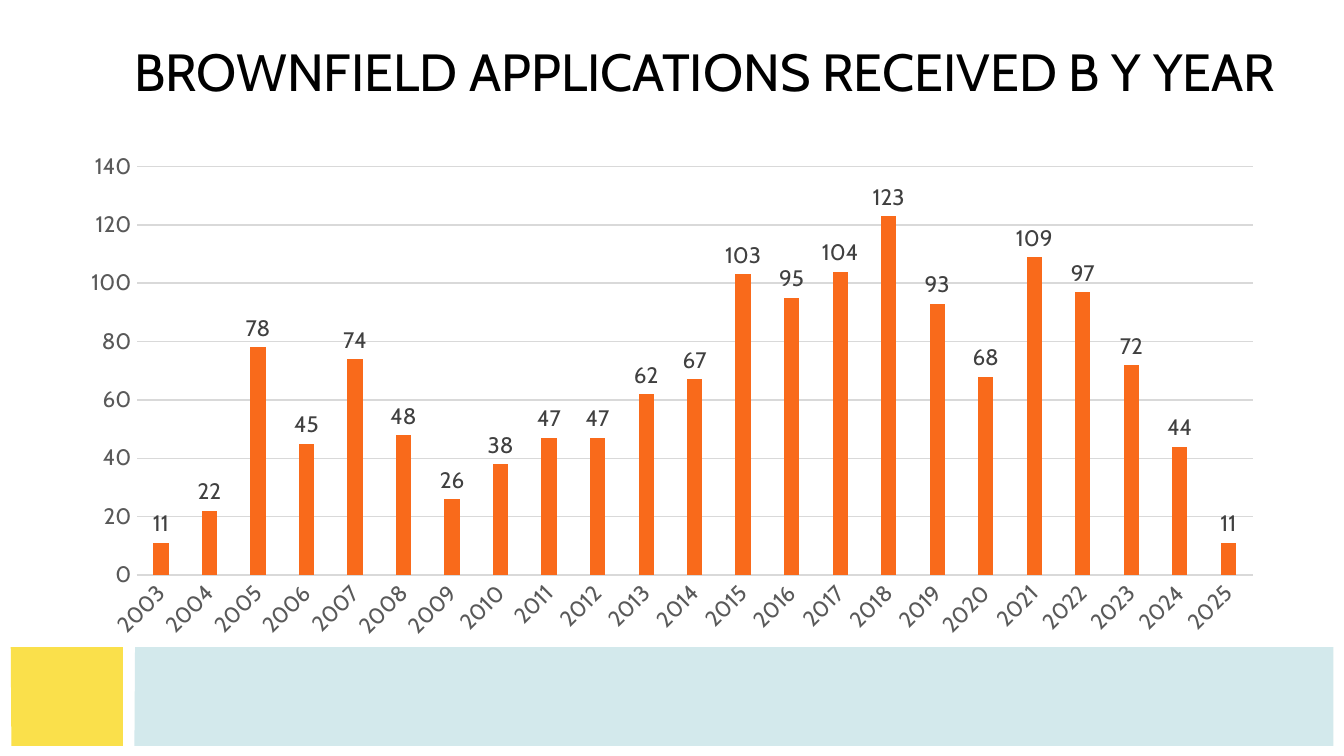
from dataclasses import dataclass

import pptx
import pptx.chart.data
import pptx.dml.color
import pptx.enum.chart
import pptx.enum.text
import pptx.oxml.ns
import pptx.util
from lxml import etree

EMU_PER_PX = 4572


@dataclass(frozen=True)
class Theme:
    font: str = "Cabin"
    title_color: str = "000000"
    axis_text: str = "595959"
    value_text: str = "404040"
    gridline: str = "D9D9D9"
    bar: str = "F96A1B"
    yellow: str = "FAE04B"
    pale_blue: str = "C8E4E8"
    title_size: int = 28
    chart_size: int = 12
    line_width: float = 0.75


@dataclass(frozen=True)
class Panel:
    corners: tuple[tuple[int, int], ...]
    color: str
    opacity: int = 100


THEME = Theme()
FOOTER_PANELS = (
    Panel(((17, 1110), (16, 963), (183, 963), (183, 1110)), THEME.yellow),
    Panel(((200, 1110), (201, 963), (1984, 963), (1984, 1110)), THEME.pale_blue, 80),
)
FIRST_YEAR = 2003
APPLICATIONS = (11, 22, 78, 45, 74, 48, 26, 38, 47, 47, 62, 67,
                103, 95, 104, 123, 93, 68, 109, 97, 72, 44, 11)


def px(length: int) -> int:
    return pptx.util.Emu(length * EMU_PER_PX)


def rgb(color: str) -> pptx.dml.color.RGBColor:
    return pptx.dml.color.RGBColor.from_string(color)


def style_font(font, size: int, color: str) -> None:
    font.name = THEME.font
    font.size = pptx.util.Pt(size)
    font.color.rgb = rgb(color)


def style_line(line) -> None:
    line.color.rgb = rgb(THEME.gridline)
    line.width = pptx.util.Pt(THEME.line_width)


def draw_panel(slide, panel: Panel) -> None:
    start, *others = panel.corners
    outline = slide.shapes.build_freeform(*start, scale=EMU_PER_PX)
    outline.add_line_segments(others, close=True)
    band = outline.convert_to_shape()
    band.shadow.inherit = False
    band.fill.solid()
    band.fill.fore_color.rgb = rgb(panel.color)
    band.line.fill.background()
    if panel.opacity < 100:
        color = band.element.xpath("./p:spPr/a:solidFill/a:srgbClr")[0]
        alpha = etree.SubElement(color, pptx.oxml.ns.qn("a:alpha"))
        alpha.set("val", str(panel.opacity * 1000))


def draw_title(slide, text: str) -> None:
    title = slide.shapes.add_textbox(px(180), px(60), px(1754), px(90)).text_frame
    title.word_wrap = True
    title.vertical_anchor = pptx.enum.text.MSO_ANCHOR.MIDDLE
    heading = title.paragraphs[0]
    heading.text = text
    style_font(heading.font, THEME.title_size, THEME.title_color)


def draw_applications_chart(slide) -> None:
    yearly = pptx.chart.data.CategoryChartData()
    yearly.categories = [str(FIRST_YEAR + i) for i in range(len(APPLICATIONS))]
    yearly.add_series("Series 1", APPLICATIONS)
    chart = slide.shapes.add_chart(
        pptx.enum.chart.XL_CHART_TYPE.COLUMN_CLUSTERED,
        px(100), px(213), px(1800), px(754), yearly).chart
    chart.has_legend = False
    chart.has_title = False
    style_font(chart.font, THEME.chart_size, THEME.axis_text)

    for axis in (chart.category_axis, chart.value_axis):
        axis.major_tick_mark = pptx.enum.chart.XL_TICK_MARK.NONE
        axis.minor_tick_mark = pptx.enum.chart.XL_TICK_MARK.NONE
        style_font(axis.tick_labels.font, THEME.chart_size, THEME.axis_text)
    style_line(chart.category_axis.format.line)
    year_labels = chart.element.xpath(".//c:catAx/c:txPr/a:bodyPr")[0]
    year_labels.set("rot", "-2700000")

    counts = chart.value_axis
    counts.minimum_scale, counts.maximum_scale, counts.major_unit = 0, 140, 20
    counts.format.line.fill.background()
    style_line(counts.major_gridlines.format.line)

    columns = chart.plots[0]
    columns.vary_by_categories = False
    columns.gap_width = 219
    columns.overlap = -27
    bars = columns.series[0]
    bars.format.fill.solid()
    bars.format.fill.fore_color.rgb = rgb(THEME.bar)
    bar_values = bars.data_labels
    bar_values.show_value = True
    bar_values.position = pptx.enum.chart.XL_LABEL_POSITION.OUTSIDE_END
    style_font(bar_values.font, THEME.chart_size, THEME.value_text)


def main() -> None:
    deck = pptx.Presentation()
    deck.slide_width, deck.slide_height = px(2000), px(1125)
    slide = deck.slides.add_slide(deck.slide_layouts[6])
    for panel in FOOTER_PANELS:
        draw_panel(slide, panel)
    draw_title(slide, "BROWNFIELD APPLICATIONS RECEIVED B Y YEAR")
    draw_applications_chart(slide)
    deck.save("out.pptx")


if __name__ == "__main__":
    main()
